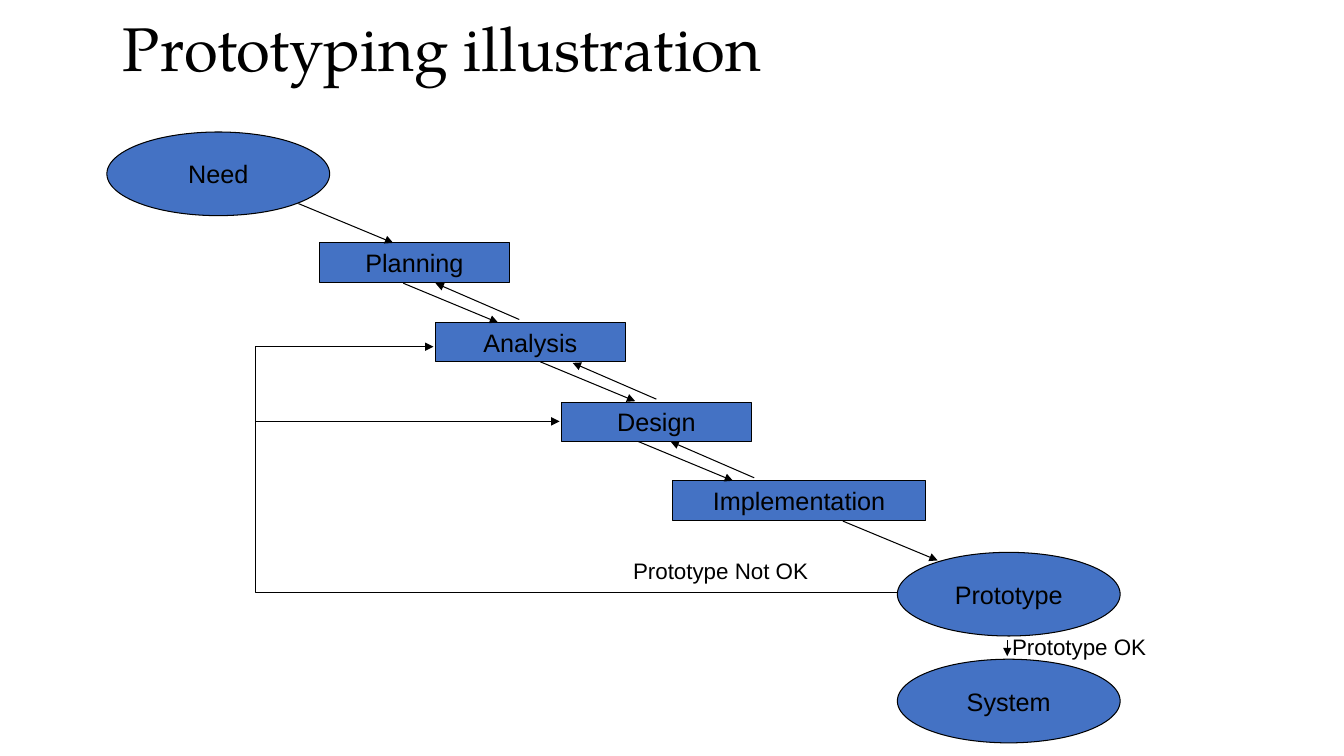
from lxml import etree
from pptx import Presentation, util as u
from pptx.dml.color import RGBColor
from pptx.enum import shapes, text
from pptx.oxml.ns import qn

PX = 9144  # EMU per px, 100 px to the inch
BLUE = RGBColor(0x44, 0x72, 0xC4)
BLACK = RGBColor(0, 0, 0)
OVAL = shapes.MSO_SHAPE.OVAL
RECT = shapes.MSO_SHAPE.RECTANGLE

deck = Presentation()
deck.slide_width, deck.slide_height = 1333 * PX, 750 * PX
slide = deck.slides.add_slide(deck.slide_layouts[6])
items = slide.shapes


def write(shape, words, size, font="Arial"):
    frame = shape.text_frame
    frame.text = words
    para = frame.paragraphs[0]
    para.font.size, para.font.name = u.Pt(size), font
    para.font.color.rgb = BLACK
    return frame, para


def ink(shape, arrow=True):
    shape.line.color.rgb = BLACK
    shape.line.width = u.Pt(0.75)
    props = shape.element.spPr
    if arrow:
        etree.SubElement(props.find(qn("a:ln")), qn("a:tailEnd"), type="triangle")
    if props.find(qn("a:effectLst")) is None:
        etree.SubElement(props, qn("a:effectLst"))


# Title
box = items.add_textbox(112 * PX, 4 * PX, 1150 * PX, 95 * PX)
frame, para = write(box, "Prototyping illustration", 44, "TeX Gyre Pagella")
frame.word_wrap = True
frame.vertical_anchor = text.MSO_ANCHOR.MIDDLE
para.line_spacing = 0.9

# Stages: ovals for start and results, boxes for steps
for name, kind, x, y, w, h in [
    ("Need", OVAL, 106, 131, 221, 83),
    ("Prototype", OVAL, 890, 548, 221, 83),
    ("System", OVAL, 890, 654, 221, 83),
    ("Planning", RECT, 317, 241, 188, 39),
    ("Analysis", RECT, 432, 320, 188, 39),
    ("Design", RECT, 557, 399, 188, 39),
    ("Implementation", RECT, 667, 477, 251, 39),
]:
    stage = items.add_shape(kind, x * PX, y * PX, w * PX, h * PX)
    stage.shadow.inherit = False
    stage.fill.solid()
    stage.fill.fore_color.rgb = BLUE
    ink(stage, arrow=False)
    frame, para = write(stage, name, 18)
    frame.word_wrap = False
    frame.vertical_anchor = text.MSO_ANCHOR.MIDDLE
    para.alignment = text.PP_ALIGN.CENTER

# Arrows: forward steps, steps back, then the two single ones
ways = [(x, y, x + 94, y + 39)
        for x, y in [(296, 202), (400, 281), (536, 359), (633, 438), (836, 517)]]
ways += [(x, y, x - 83, y - 36) for x, y in [(515, 317), (651, 396), (748, 474)]]
ways += [(999, 635, 999, 651), (253, 418, 555, 418)]
for way in ways:
    line = items.add_connector(shapes.MSO_CONNECTOR.STRAIGHT, *(v * PX for v in way))
    ink(line)

# Loop back from the prototype to analysis
path = items.build_freeform(890, 588, scale=PX)
path.add_line_segments([(253, 588), (253, 344), (430, 344)], close=False)
loop = path.convert_to_shape()
loop.shadow.inherit = False
loop.fill.background()
ink(loop)

# Labels on the outcomes
for words, x, y, w in [("Prototype Not OK", 618, 548, 258), ("Prototype OK", 994, 623, 204)]:
    label = items.add_textbox(x * PX, y * PX, w * PX, 37 * PX)
    frame, para = write(label, words, 16)
    frame.word_wrap = True

deck.save("out.pptx")
